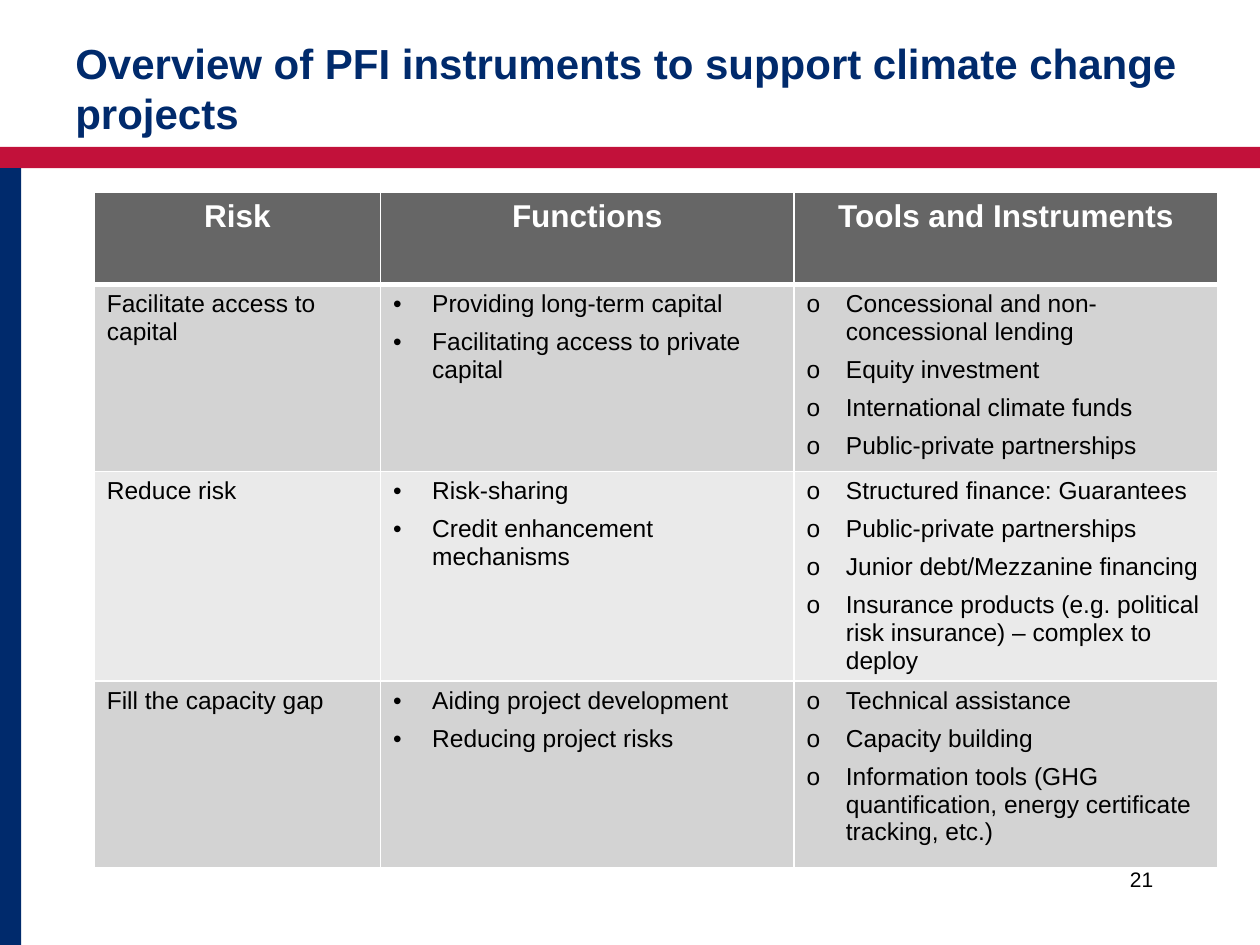
import pptx
import pptx.util
import pptx.dml.color
import pptx.enum.shapes
import pptx.enum.text
import pptx.oxml
import pptx.oxml.ns

Cm, Pt = pptx.util.Cm, pptx.util.Pt
ALIGN = pptx.enum.text.PP_ALIGN
ANCHOR = pptx.enum.text.MSO_ANCHOR
NS = pptx.oxml.ns.nsdecls("a")

NAVY, RED, WHITE, BLACK = "002A6C", "C2113A", "FFFFFF", "000000"
HEAD, DARK, LIGHT = "666666", "D3D3D3", "EAEAEA"

HEADS = ["Risk", "Functions", "Tools and Instruments"]
BODY = [
    (["Facilitate access to capital"],
     ["Providing long-term capital", "Facilitating access to private capital"],
     ["Concessional and non-concessional lending", "Equity investment",
      "International climate funds", "Public-private partnerships"]),
    (["Reduce risk"],
     ["Risk-sharing", "Credit enhancement mechanisms"],
     ["Structured finance: Guarantees", "Public-private partnerships",
      "Junior debt/Mezzanine financing",
      "Insurance products (e.g. political risk insurance) – complex to deploy"]),
    (["Fill the capacity gap"],
     ["Aiding project development", "Reducing project risks"],
     ["Technical assistance", "Capacity building",
      "Information tools (GHG quantification, energy certificate tracking, etc.)"]),
]
BULLETS = [None, "•", "o"]


def color(code):
    return pptx.dml.color.RGBColor.from_string(code)


def style(para, size, code, bold=False, align=ALIGN.LEFT):
    para.alignment = align
    for run in para.runs:
        font = run.font
        font.name, font.size, font.bold = "Arial", Pt(size), bold
        font.color.rgb = color(code)


def add_bar(slide, left, top, width, height, code):
    kind = pptx.enum.shapes.MSO_SHAPE.RECTANGLE
    bar = slide.shapes.add_shape(kind, Cm(left), Cm(top), Cm(width), Cm(height))
    bar.shadow.inherit = False
    bar.fill.solid()
    bar.fill.fore_color.rgb = color(code)
    bar.line.fill.background()


def add_label(slide, text, left, top, width, height, anchor, **look):
    box = slide.shapes.add_textbox(Cm(left), Cm(top), Cm(width), Cm(height))
    frame = box.text_frame
    frame.word_wrap = True
    frame.vertical_anchor = anchor
    frame.text = text
    style(frame.paragraphs[0], **look)


def add_bullet(para, mark):
    props = para._p.get_or_add_pPr()
    props.set("marL", str(Cm(0.79)))
    props.set("indent", str(-Cm(0.79)))
    for tag in ('buFont %s typeface="Arial"', f'buChar %s char="{mark}"'):
        props.append(pptx.oxml.parse_xml(f"<a:{tag % NS}/>"))


def set_cell(cell, lines, fill, top=1, bottom=1):
    # Borders must come before the fill
    props = cell._tc.get_or_add_tcPr()
    for side, width in zip("LRTB", (1, 1, top, bottom)):
        props.append(pptx.oxml.parse_xml(
            f'<a:ln{side} {NS} w="{Pt(width)}"><a:solidFill>'
            f'<a:srgbClr val="{WHITE}"/></a:solidFill></a:ln{side}>'))
    cell.fill.solid()
    cell.fill.fore_color.rgb = color(fill)
    cell.text_frame.text = "\n".join(lines)
    return cell.text_frame.paragraphs


def add_grid(slide):
    # The second body row is taller, to hold its six lines
    widths, heights = [5.77, 8.34, 8.54], [1.85, 3.77, 4.23, 3.77]
    grid = slide.shapes.add_table(
        len(heights), len(widths), Cm(1.9), Cm(3.88),
        Cm(sum(widths)), Cm(sum(heights))).table
    for col, width in zip(grid.columns, widths):
        col.width = Cm(width)
    for row, height in zip(grid.rows, heights):
        row.height = Cm(height)

    # Header row
    for c, head in enumerate(HEADS):
        for para in set_cell(grid.cell(0, c), [head], HEAD, bottom=3):
            style(para, 18, WHITE, True, ALIGN.CENTER)

    # Body rows in alternating bands
    for r, row in enumerate(BODY, 1):
        fill = DARK if r % 2 else LIGHT
        for c, (lines, mark) in enumerate(zip(row, BULLETS)):
            paras = set_cell(grid.cell(r, c), lines, fill,
                             top=3 if r == 1 else 1)
            for para in paras:
                para.space_after = Pt(6)
                if mark:
                    add_bullet(para, mark)
                style(para, 14, BLACK)
            # No gap below the last line, so the row keeps its height
            paras[-1].space_after = Pt(0)


def main():
    deck = pptx.Presentation()
    deck.slide_width, deck.slide_height = Cm(25.4), Cm(19.05)
    slide = deck.slides.add_slide(deck.slide_layouts[6])

    # Frame bars
    add_bar(slide, 0, 2.96, 25.4, 0.43, RED)
    add_bar(slide, 0, 3.39, 0.43, 15.66, NAVY)

    # Table, page number and title
    add_grid(slide)
    add_label(slide, "21", 18.2, 17.35, 5.3, 1.27, ANCHOR.TOP,
              size=12, code=BLACK, align=ALIGN.RIGHT)
    add_label(slide, "Overview of PFI instruments to support climate change projects",
              1.27, 0.61, 23.3, 2.31, ANCHOR.MIDDLE,
              size=24, code=NAVY, bold=True)

    deck.save("out.pptx")


if __name__ == "__main__":
    main()
